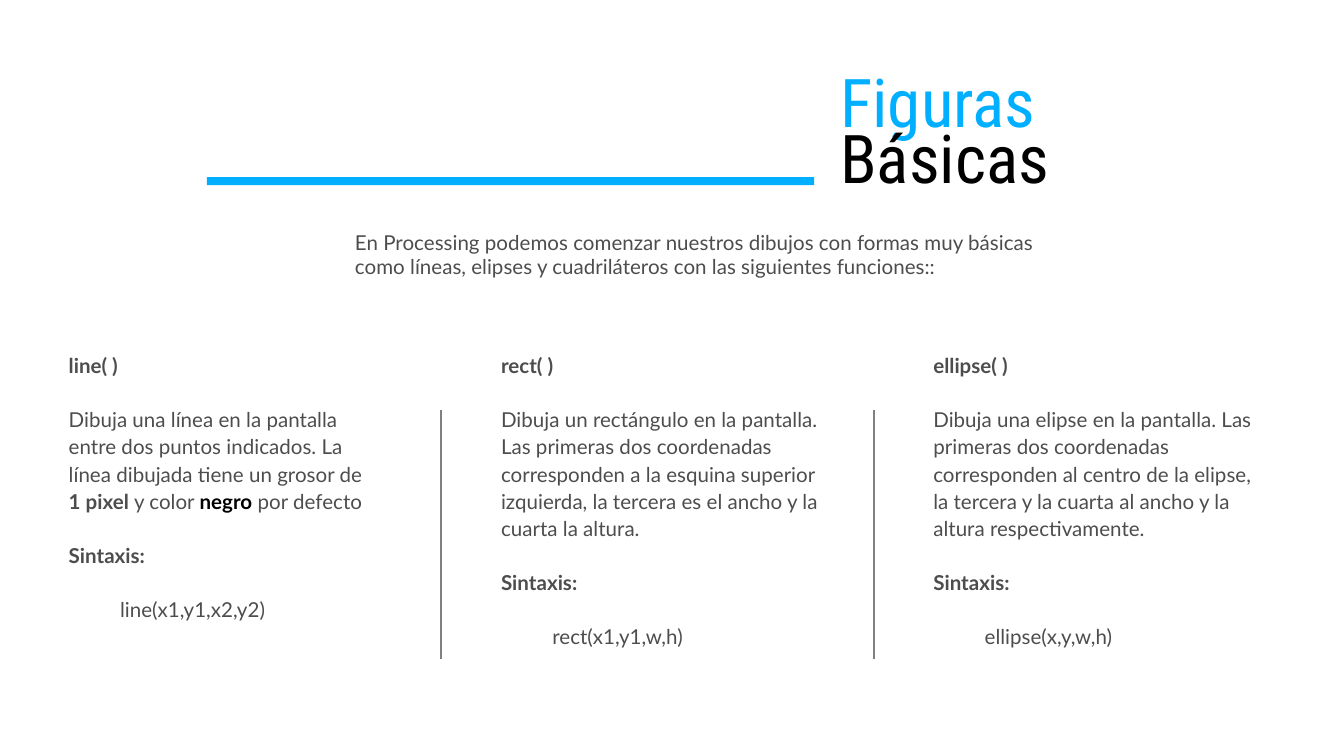
from lxml import etree
from pptx import Presentation
from pptx.dml.color import RGBColor
from pptx.enum.shapes import MSO_CONNECTOR, MSO_SHAPE
from pptx.enum.text import MSO_ANCHOR, MSO_AUTO_SIZE, PP_ALIGN
from pptx.oxml.ns import qn
from pptx.util import Cm, Pt

LEFT = PP_ALIGN.LEFT
TOP, MIDDLE = MSO_ANCHOR.TOP, MSO_ANCHOR.MIDDLE
NO_FIT = MSO_AUTO_SIZE.NONE
STRAIGHT = MSO_CONNECTOR.STRAIGHT
RECT = MSO_SHAPE.RECTANGLE

BLUE = RGBColor(0x00, 0xAF, 0xFF)
BLACK = RGBColor(0x00, 0x00, 0x00)
TEXT = RGBColor(0x4D, 0x4D, 0x4D)
GRAY = RGBColor(0x80, 0x80, 0x80)

TITLE_FONT, BODY_FONT = "Roboto Condensed", "Lato"
TITLE_SIZE, BODY_SIZE = 36, 11
BLANK_LINE = Pt(14.5)
INDENT = Cm(0.97)

INTRO = ("En Processing podemos comenzar nuestros dibujos con formas muy básicas "
         "como líneas, elipses y cuadriláteros con las siguientes funciones::")

COLUMNS = [
    (5.8, "line( )",
     [("Dibuja una línea en la pantalla entre dos puntos indicados. "
       "La línea dibujada tiene un grosor de ", False, TEXT),
      ("1 pixel ", True, TEXT), ("y color ", False, TEXT),
      ("negro", True, BLACK), (" por defecto", False, TEXT)],
     "line(x1,y1,x2,y2)"),
    (6.22, "rect( )",
     [("Dibuja un rectángulo en la pantalla. Las primeras dos coordenadas "
       "corresponden a la esquina superior izquierda, la tercera es el ancho "
       "y la cuarta la altura.", False, TEXT)],
     "rect(x1,y1,w,h)"),
    (6.02, "ellipse( )",
     [("Dibuja una elipse en la pantalla. Las primeras dos coordenadas "
       "corresponden al centro de la elipse, la tercera y la cuarta al ancho "
       "y la altura respectivamente.", False, TEXT)],
     "ellipse(x,y,w,h)"),
]
COLUMN_LEFT, COLUMN_TOP, COLUMN_HEIGHT = 1.3, 6.63, 5.63
COLUMN_PITCH = 8.17


def place(sp, x, y, w, h):
    sp.left, sp.top, sp.width, sp.height = Cm(x), Cm(y), Cm(w), Cm(h)


def set_frame(tf, anchor):
    tf.auto_size = NO_FIT
    tf.word_wrap = True
    tf.vertical_anchor = anchor
    tf.margin_left = tf.margin_top = tf.margin_right = tf.margin_bottom = 0


def format_run(r, font, size, color, bold=False):
    r.font.name = font
    r.font.size = Pt(size)
    r.font.color.rgb = color
    r.font.bold = bold


def add_text(s, x, y, w, h):
    tf = s.shapes.add_textbox(Cm(x), Cm(y), Cm(w), Cm(h)).text_frame
    set_frame(tf, TOP)
    return tf


def add_title(s, x, y, w, h):
    sp = s.shapes.title
    place(sp, x, y, w, h)
    tf = sp.text_frame
    tf.text = "Figuras\nBásicas"
    set_frame(tf, MIDDLE)
    for p, color in zip(tf.paragraphs, (BLUE, BLACK)):
        p.alignment = LEFT
        p.line_spacing = 0.7
        format_run(p.runs[0], TITLE_FONT, TITLE_SIZE, color)


def add_bar(s, x, y, w, h):
    sp = s.shapes.add_shape(RECT, Cm(x), Cm(y), Cm(w), Cm(h))
    sp.shadow.inherit = False
    sp.fill.solid()
    sp.fill.fore_color.rgb = BLUE
    sp.line.fill.background()


def add_intro(s, x, y, w, h):
    tf = add_text(s, x, y, w, h)
    tf.text = INTRO
    format_run(tf.paragraphs[0].runs[0], BODY_FONT, BODY_SIZE, TEXT)


def add_column(s, x, y, w, h, name, description, syntax):
    tf = add_text(s, x, y, w, h)
    paragraphs = [[(name, True, TEXT)], description,
                  [("Sintaxis:", True, TEXT)], [(syntax, False, TEXT)]]
    for i, runs in enumerate(paragraphs):
        p = tf.add_paragraph() if i else tf.paragraphs[0]
        p.line_spacing = 1.1
        p.space_before = BLANK_LINE if i else 0
        for text, bold, color in runs:
            r = p.add_run()
            r.text = text
            format_run(r, BODY_FONT, BODY_SIZE, color, bold)
    p._p.get_or_add_pPr().set("marL", str(INDENT))


def add_divider(s, x, y, h):
    line = s.shapes.add_connector(STRAIGHT, Cm(x), Cm(y), Cm(x), Cm(y + h))
    line.line.color.rgb = GRAY
    line.line.width = Pt(1)
    etree.SubElement(line._element.spPr, qn("a:effectLst"))


def main():
    prs = Presentation()
    prs.slide_width, prs.slide_height = Cm(25.4), Cm(14.29)
    s = prs.slides.add_slide(prs.slide_layouts[5])
    add_title(s, 15.88, 0.53, 6.38, 4.17)
    add_intro(s, 6.71, 4.34, 13, 1.47)
    add_bar(s, 3.91, 3.35, 11.48, 0.15)
    for i, (width, *content) in enumerate(COLUMNS):
        x = COLUMN_LEFT + i * COLUMN_PITCH
        add_column(s, x, COLUMN_TOP, width, COLUMN_HEIGHT, *content)
        if i:
            add_divider(s, x - 1.13, 7.75, 4.7)
    prs.save("out.pptx")


if __name__ == "__main__":
    main()
